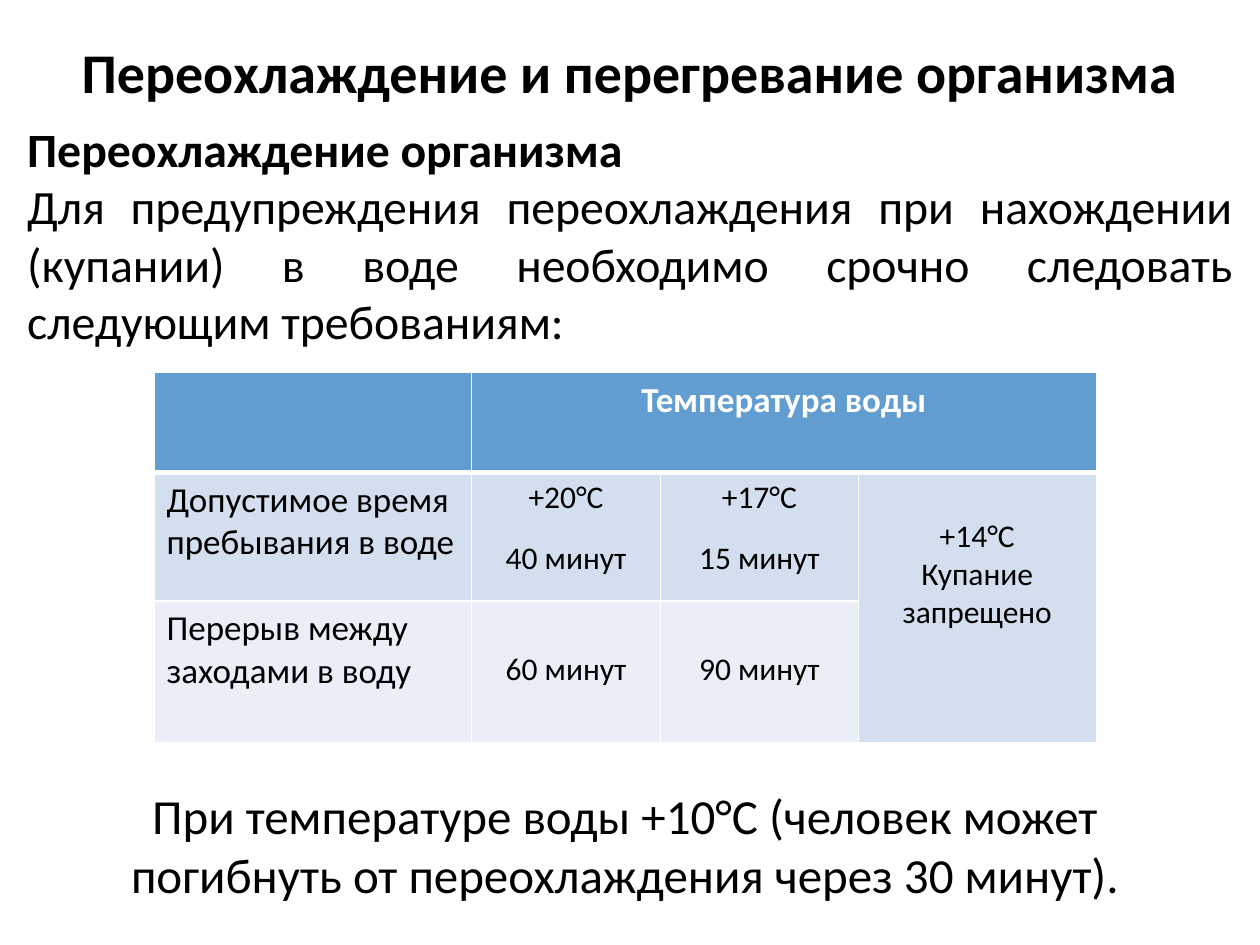
from dataclasses import dataclass

from lxml import etree
from pptx import Presentation
from pptx.dml.color import RGBColor
from pptx.enum import text
from pptx.oxml import ns
from pptx.util import Pt


@dataclass(frozen=True)
class Theme:
    font: str = "Calibri"
    black: str = "000000"
    white: str = "FFFFFF"
    header: str = "629DD1"
    band_dark: str = "D3DFEE"
    band_light: str = "EAEFF7"
    title: float = 32
    intro: float = 27.3
    warning: float = 28
    label: float = 20
    value: float = 18


theme = Theme()
Align, Anchor = text.PP_ALIGN, text.MSO_ANCHOR


def write(frame, content, size, align, color=theme.black, bold=False):
    frame.text = content
    frame.word_wrap = True
    for para in frame.paragraphs:
        para.alignment = align
        for span in para.runs:
            span.font.name = theme.font
            span.font.size = Pt(size)
            span.font.bold = bold
            span.font.color.rgb = RGBColor.from_string(color)


def add_borders(cell, widths):
    """Draw white cell edges; widths maps L, R, T and B to points."""
    properties = cell._tc.get_or_add_tcPr()
    for index, (side, width) in enumerate(widths.items()):
        line = etree.Element(ns.qn(f"a:ln{side}"), w=str(Pt(width)))
        fill = etree.SubElement(line, ns.qn("a:solidFill"))
        etree.SubElement(fill, ns.qn("a:srgbClr"), val=theme.white)
        properties.insert(index, line)


deck = Presentation()
deck.slide_width, deck.slide_height = Pt(720), Pt(540)
page = deck.slides.add_slide(deck.slide_layouts[5])

title = page.shapes.title
title.left, title.top, title.width, title.height = Pt(36), Pt(9.5), Pt(648), Pt(62.5)
write(title.text_frame, "Переохлаждение и перегревание организма",
      theme.title, Align.CENTER, bold=True)
title.text_frame.vertical_anchor = Anchor.MIDDLE

# Table
column_widths = [181.5, 108, 113, 136]
row_heights = [57, 73.5, 81]
table = page.shapes.add_table(3, 4, Pt(88), Pt(213), Pt(sum(column_widths)),
                              Pt(sum(row_heights))).table
for column, width in zip(table.columns, column_widths):
    column.width = Pt(width)
for row, height in zip(table.rows, row_heights):
    row.height = Pt(height)

row_fills = [theme.header, theme.band_dark, theme.band_light]
for r, fill in enumerate(row_fills):
    for cell in table.rows[r].cells:
        cell.fill.solid()
        cell.fill.fore_color.rgb = RGBColor.from_string(fill)
        add_borders(cell, {"L": 1, "R": 1, "T": 3 if r == 1 else 1, "B": 3 if r == 0 else 1})
table.cell(0, 1).merge(table.cell(0, 3))
table.cell(1, 3).merge(table.cell(2, 3))

write(table.cell(0, 1).text_frame, "Температура воды",
      theme.label, Align.CENTER, theme.white, bold=True)
row_labels = ["Допустимое время пребывания в воде", "Перерыв между заходами в воду"]
for r, label in enumerate(row_labels, start=1):
    write(table.cell(r, 0).text_frame, label, theme.label, Align.LEFT)

times = {
    (1, 1): "+20°С\n40 минут",
    (1, 2): "+17°С\n15 минут",
    (2, 1): "60 минут",
    (2, 2): "90 минут",
}
for (r, c), content in times.items():
    cell = table.cell(r, c)
    cell.margin_left = cell.margin_right = Pt(5)
    cell.margin_top, cell.margin_bottom = Pt(25 if r == 2 else 0), Pt(0)
    write(cell.text_frame, content, theme.value, Align.CENTER)
    for para in cell.text_frame.paragraphs:
        para.line_spacing = 1.15
        para.space_after = Pt(10)

forbidden = table.cell(1, 3)
forbidden.margin_top = Pt(25.5)
write(forbidden.text_frame, "+14°С\nКупание запрещено", theme.value, Align.CENTER)

# Text above and below the table
intro = page.shapes.add_textbox(Pt(8.5), Pt(55), Pt(703), Pt(158)).text_frame
write(intro, "Переохлаждение организма\n"
      "Для предупреждения переохлаждения при нахождении (купании) в воде "
      "необходимо срочно следовать следующим требованиям:",
      theme.intro, Align.JUSTIFY)
intro.vertical_anchor = Anchor.MIDDLE
intro.paragraphs[0].runs[0].font.bold = True

warning = page.shapes.add_textbox(Pt(36.5), Pt(445.5), Pt(641), Pt(75)).text_frame
write(warning, "При температуре воды +10°С (человек может погибнуть "
      "от переохлаждения через 30 минут).", theme.warning, Align.CENTER)

deck.save("out.pptx")
